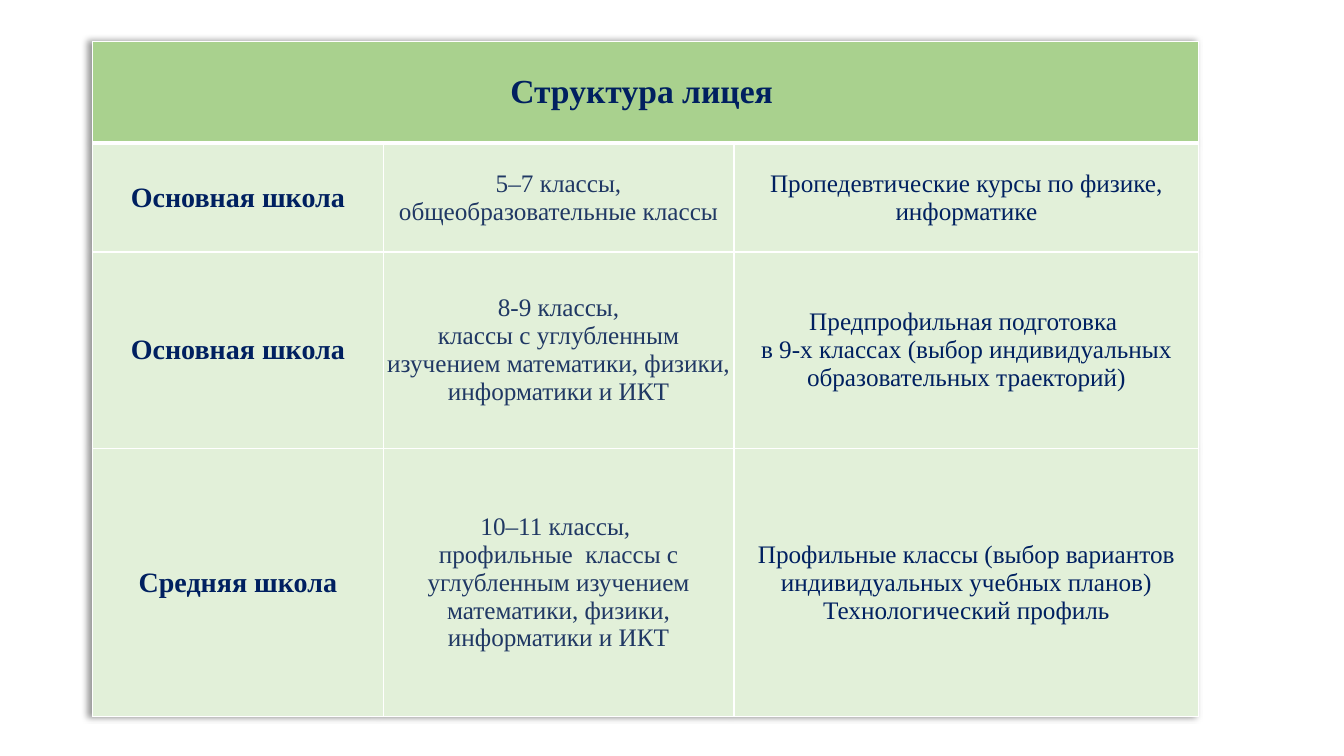
"""Build the slide with the table of the lyceum's structure."""
from dataclasses import dataclass

from lxml.etree import SubElement
from pptx import Presentation
from pptx.dml.color import RGBColor
from pptx.enum.text import MSO_ANCHOR, PP_ALIGN
from pptx.oxml import parse_xml
from pptx.oxml.ns import nsdecls, qn
from pptx.table import Table, _Cell
from pptx.util import Inches, Pt

NAVY, SLATE, WHITE = "002060", "203864", "FFFFFF"
HEADER_GREEN, BODY_GREEN = "A9D18E", "E2F0D9"
COLUMN_WIDTHS = (2.88, 3.48, 4.61)
ROW_HEIGHTS = (1.01, 1.08, 1.95, 2.66)
CELL_MARGIN = Inches(0.01)


@dataclass
class Stage:
    school: str
    classes: str
    programme: str


STAGES = (
    Stage("Основная школа",
          "5–7 классы, общеобразовательные классы",
          "Пропедевтические курсы по физике, информатике"),
    Stage("Основная школа",
          "8-9 классы,\nклассы с углубленным изучением математики, физики, информатики и ИКТ",
          "Предпрофильная подготовка \n"
          "в 9-х классах (выбор индивидуальных образовательных траекторий)"),
    Stage("Средняя школа",
          "10–11 классы, \n"
          "профильные  классы с углубленным изучением математики, физики, информатики и ИКТ",
          "Профильные классы (выбор вариантов индивидуальных учебных планов)\n"
          "Технологический профиль"),
)


def rgb(value: str) -> RGBColor:
    return RGBColor.from_string(value)


def write(cell: _Cell, text: str, *, size: int = 18, color: str = NAVY,
          bold: bool = False) -> None:
    cell.text = text
    cell.vertical_anchor = MSO_ANCHOR.MIDDLE
    cell.margin_left = cell.margin_right = CELL_MARGIN
    cell.margin_top = cell.margin_bottom = CELL_MARGIN
    for paragraph in cell.text_frame.paragraphs:
        paragraph.alignment = PP_ALIGN.CENTER
        for run in paragraph.runs:
            run.font.name = "Times New Roman"
            run.font.size = Pt(size)
            run.font.bold = bold
            run.font.color.rgb = rgb(color)


def style_cell(cell: _Cell, fill: str, top: int = 1, bottom: int = 1) -> None:
    properties = cell._tc.get_or_add_tcPr()
    for side, width in (("L", 1), ("R", 1), ("T", top), ("B", bottom)):
        border = SubElement(properties, qn(f"a:ln{side}"), w=str(Pt(width)))
        SubElement(SubElement(border, qn("a:solidFill")), qn("a:srgbClr"), val=WHITE)
    cell.fill.solid()
    cell.fill.fore_color.rgb = rgb(fill)


def add_shadow(table: Table) -> None:
    table._tbl.tblPr.insert(0, parse_xml(
        f'<a:effectLst {nsdecls("a")}>'
        '<a:outerShdw blurRad="50800" dist="38100" dir="10800000" algn="r" rotWithShape="0">'
        '<a:srgbClr val="000000"><a:alpha val="40000"/></a:srgbClr>'
        '</a:outerShdw></a:effectLst>'))


def main() -> None:
    presentation = Presentation()
    presentation.slide_width, presentation.slide_height = Inches(13.33), Inches(7.5)
    slide = presentation.slides.add_slide(presentation.slide_layouts[6])
    structure = slide.shapes.add_table(
        len(ROW_HEIGHTS), len(COLUMN_WIDTHS), Inches(0.92), Inches(0.41),
        Inches(sum(COLUMN_WIDTHS)), Inches(sum(ROW_HEIGHTS))).table
    structure.horz_banding = False
    for column, width in zip(structure.columns, COLUMN_WIDTHS):
        column.width = Inches(width)
    for row, height in zip(structure.rows, ROW_HEIGHTS):
        row.height = Inches(height)
    add_shadow(structure)

    for column in range(len(COLUMN_WIDTHS)):
        style_cell(structure.cell(0, column), HEADER_GREEN, bottom=3)
    structure.cell(0, 0).merge(structure.cell(0, len(COLUMN_WIDTHS) - 1))
    write(structure.cell(0, 0), "Структура лицея ", size=24, bold=True)

    for row, stage in enumerate(STAGES, start=1):
        for column in range(len(COLUMN_WIDTHS)):
            style_cell(structure.cell(row, column), BODY_GREEN, top=3 if row == 1 else 1)
        write(structure.cell(row, 0), stage.school, size=20, bold=True)
        write(structure.cell(row, 1), stage.classes, color=SLATE)
        write(structure.cell(row, 2), stage.programme)

    presentation.save("out.pptx")


if __name__ == "__main__":
    main()
